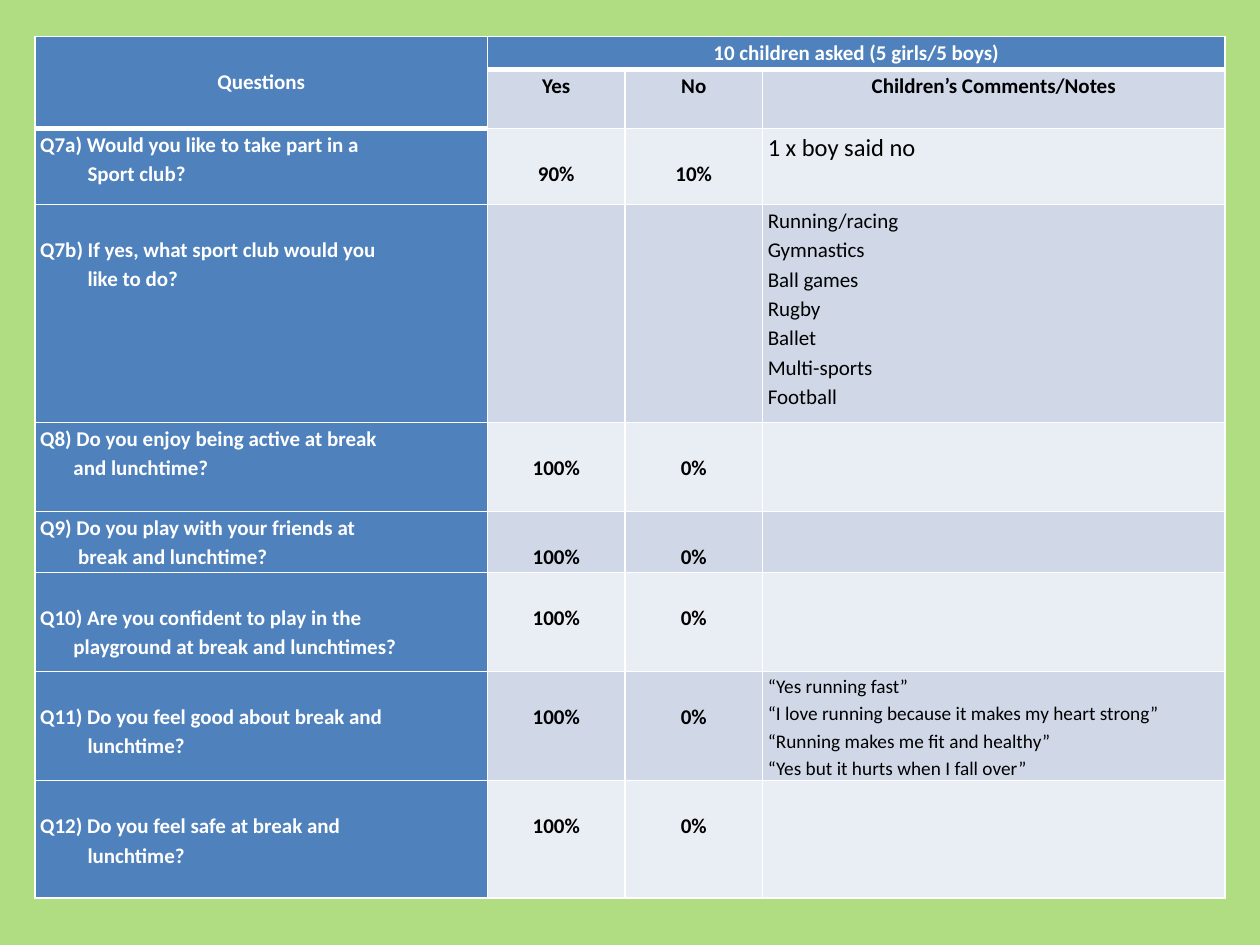
from lxml import etree
from pptx import Presentation
from pptx.dml.color import RGBColor
from pptx.enum.text import PP_ALIGN
from pptx.oxml.ns import qn
from pptx.util import Pt

LEFT, CENTER = PP_ALIGN.LEFT, PP_ALIGN.CENTER
BLANK_LAYOUT = 6

BLUE, WHITE, BLACK, GREEN = "4F81BD", "FFFFFF", "000000", "92D050"
BANDS = ("E9EDF4", "D0D8E8")
LINE_GAP = 16.8  # height of one 12 pt line at 1.15 spacing

COLUMN_WIDTHS = (258.6, 78.6, 78.6, 264.4)
ROW_HEIGHTS = (19, 33.6, 43.4, 124.6, 50.8, 34.9, 56.6, 62.3, 67.2)

# question lines, indent of the second line, lines left free above it,
# yes, no, comments, comment size
SURVEY = [
    (["Q7a) Would you like to take part in a", "Sport club?"], 27, 0,
     "90%", "10%", ["1 x boy said no"], 14),
    (["Q7b) If yes, what sport club would you", "like to do?"], 27, 1,
     "", "", ["Running/racing", "Gymnastics", "Ball games", "Rugby", "Ballet",
              "Multi-sports", "Football"], 12),
    (["Q8) Do you enjoy being active at break", "and lunchtime?"], 19, 0,
     "100%", "0%", [], 12),
    (["Q9) Do you play with your friends at", "break and lunchtime?"], 21.7, 0,
     "100%", "0%", [], 12),
    (["Q10) Are you confident to play in the",
      "playground at break and lunchtimes?"], 19, 1,
     "100%", "0%", [], 12),
    (["Q11) Do you feel good about break and", "lunchtime?"], 27, 1,
     "100%", "0%",
     ["“Yes running fast”",
      "“I love running because it makes my heart strong”",
      "“Running makes me fit and healthy”",
      "“Yes but it hurts when I fall over”"], 11),
    (["Q12) Do you feel safe at break and", "lunchtime?"], 27, 1,
     "100%", "0%", [], 12),
]


def rgb(value):
    return RGBColor.from_string(value)


def set_background(slide, color, opacity):
    fill = slide.background.fill
    fill.solid()
    fill.fore_color.rgb = rgb(color)
    color_element = slide.background._cSld.find(".//" + qn("a:srgbClr"))
    etree.SubElement(color_element, qn("a:alpha"), val=str(opacity * 1000))


def set_borders(cell, top=1, bottom=1):
    properties = cell._tc.get_or_add_tcPr()
    sides = (("lnL", 1), ("lnR", 1), ("lnT", top), ("lnB", bottom))
    for position, (side, width) in enumerate(sides):
        line = etree.Element(qn("a:" + side), w=str(Pt(width)))
        fill = etree.SubElement(line, qn("a:solidFill"))
        etree.SubElement(fill, qn("a:srgbClr"), val=WHITE)
        properties.insert(position, line)


def style_cell(cell, fill, top=1, bottom=1):
    set_borders(cell, top, bottom)
    cell.fill.solid()
    cell.fill.fore_color.rgb = rgb(fill)
    cell.margin_left = cell.margin_right = Pt(3)
    cell.margin_top = cell.margin_bottom = 0


def write(cell, lines, color=BLACK, size=12, bold=True, align=CENTER,
          lines_above=0, indent=0):
    cell.margin_top = Pt(lines_above * LINE_GAP)
    frame = cell.text_frame
    frame.text = "\n".join(lines)
    for number, paragraph in enumerate(frame.paragraphs):
        paragraph.alignment = align
        paragraph.line_spacing = 1.15
        font = paragraph.font
        font.name, font.size, font.bold = "Calibri", Pt(size), bold
        font.color.rgb = rgb(color)
        if number and indent:
            paragraph._p.get_or_add_pPr().set("marL", str(Pt(indent)))


def add_survey_table(slide):
    frame = slide.shapes.add_table(
        len(ROW_HEIGHTS), len(COLUMN_WIDTHS), Pt(20), Pt(20.8),
        Pt(sum(COLUMN_WIDTHS)), Pt(sum(ROW_HEIGHTS)))
    table = frame.table
    table.first_row = table.horz_banding = False
    for column, width in zip(table.columns, COLUMN_WIDTHS):
        column.width = Pt(width)
    for row, height in zip(table.rows, ROW_HEIGHTS):
        row.height = Pt(height)
    return table


def fill_header(table):
    for column in range(len(COLUMN_WIDTHS)):
        style_cell(table.cell(0, column), BLUE, bottom=3)
        if column:
            style_cell(table.cell(1, column), BANDS[1], top=3)
        else:
            style_cell(table.cell(1, column), BLUE, bottom=3)
    table.cell(0, 0).merge(table.cell(1, 0))
    table.cell(0, 1).merge(table.cell(0, 3))
    write(table.cell(0, 0), ["Questions"], WHITE, lines_above=1)
    write(table.cell(0, 1), ["10 children asked (5 girls/5 boys)"], WHITE)
    for column, title in enumerate(("Yes", "No", "Children’s Comments/Notes"), 1):
        write(table.cell(1, column), [title])


def fill_answers(table):
    for row, entry in enumerate(SURVEY, 2):
        question, indent, lines_above, yes, no, comments, size = entry
        top = 3 if row == 2 else 1
        cells = [table.cell(row, column) for column in range(len(COLUMN_WIDTHS))]
        style_cell(cells[0], BLUE, top=top)
        for cell in cells[1:]:
            style_cell(cell, BANDS[row % 2])
        write(cells[0], question, WHITE, align=LEFT,
              lines_above=lines_above, indent=indent)
        for cell, share in zip(cells[1:3], (yes, no)):
            write(cell, [share], lines_above=1)
        write(cells[3], comments, size=size, bold=False, align=LEFT)


def main():
    deck = Presentation()
    deck.slide_width, deck.slide_height = Pt(720), Pt(540)
    slide = deck.slides.add_slide(deck.slide_layouts[BLANK_LAYOUT])
    set_background(slide, GREEN, 71)

    # Survey results
    table = add_survey_table(slide)
    fill_header(table)
    fill_answers(table)

    deck.save("out.pptx")


if __name__ == "__main__":
    main()
